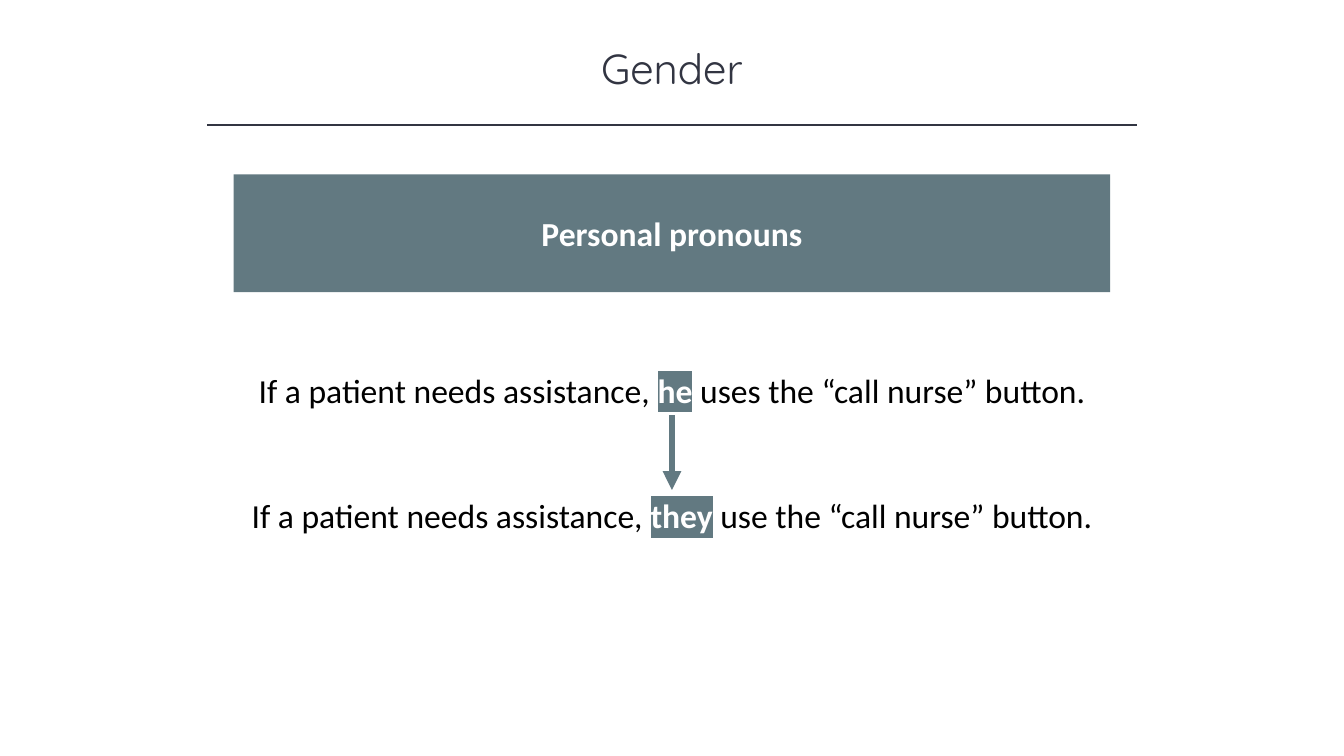
from lxml import etree
from pptx import Presentation
from pptx.dml.color import RGBColor
from pptx.enum import shapes, text
from pptx.oxml.ns import qn
from pptx.util import Pt

HEADING = "Gender"
TOPIC = "Personal pronouns"
OPENING = "If a patient needs assistance, "
EXAMPLES = [
    ("he", " uses the “call nurse” button."),
    ("they", " use the “call nurse” button."),
]
COLORS = {"ink": "323542", "slate": "627981", "black": "000000", "white": "FFFFFF"}

WIDTH, HEIGHT = 960, 540
CENTER = WIDTH / 2
RULE_WIDTH, RULE_Y = 664, 89.3
BAND_WIDTH = 626
BAND_LEFT = (WIDTH - BAND_WIDTH) / 2
FIRST_TOP, STEP, SENTENCE_HEIGHT = 260.6, 89.4, 36


def rgb(name):
    return RGBColor.from_string(COLORS[name])


def add_run(shape, words, size=24, font="Calibri", color="black", bold=False, highlight=None):
    """Append words to the shape's centred first paragraph."""
    paragraph = shape.text_frame.paragraphs[0]
    paragraph.alignment = text.PP_ALIGN.CENTER
    run = paragraph.add_run()
    run.text = words
    run.font.size, run.font.name, run.font.bold = Pt(size), font, bold
    run.font.color.rgb = rgb(color)
    if highlight:
        marker = etree.Element(qn("a:highlight"))
        etree.SubElement(marker, qn("a:srgbClr"), val=COLORS[highlight])
        run.font._element.find(qn("a:solidFill")).addnext(marker)


def add_line(slide, start, end, color, weight, arrow=False):
    line = slide.shapes.add_connector(
        shapes.MSO_CONNECTOR.STRAIGHT, *map(Pt, start + end))
    line.line.color.rgb = rgb(color)
    line.line.width = Pt(weight)
    if arrow:
        etree.SubElement(line.line._get_or_add_ln(), qn("a:tailEnd"), type="triangle")
    etree.SubElement(line._element.spPr, qn("a:effectLst"))


def main():
    deck = Presentation()
    deck.slide_width, deck.slide_height = Pt(WIDTH), Pt(HEIGHT)
    slide = deck.slides.add_slide(deck.slide_layouts[5])

    heading = slide.shapes.title
    heading.left, heading.top, heading.width, heading.height = map(Pt, (120, 26.6, 720, 44))
    heading.text_frame.auto_size = text.MSO_AUTO_SIZE.NONE
    add_run(heading, HEADING, size=30, font="Quicksand", color="ink")

    add_line(slide, (CENTER - RULE_WIDTH / 2, RULE_Y),
             (CENTER + RULE_WIDTH / 2, RULE_Y), "ink", 1)

    topic = slide.shapes.add_shape(
        shapes.MSO_SHAPE.RECTANGLE, *map(Pt, (BAND_LEFT, 124.6, BAND_WIDTH, 84.2)))
    topic.shadow.inherit = False
    topic.fill.solid()
    topic.fill.fore_color.rgb = rgb("slate")
    topic.line.fill.background()
    topic.text_frame.vertical_anchor = text.MSO_ANCHOR.MIDDLE
    add_run(topic, TOPIC, color="white", bold=True)

    for index, (pronoun, ending) in enumerate(EXAMPLES):
        top = FIRST_TOP + index * STEP
        sentence = slide.shapes.add_textbox(
            *map(Pt, (BAND_LEFT, top, BAND_WIDTH, SENTENCE_HEIGHT)))
        sentence.text_frame.word_wrap = True
        add_run(sentence, OPENING)
        add_run(sentence, pronoun, color="white", bold=True, highlight="slate")
        add_run(sentence, ending)

    add_line(slide, (CENTER, FIRST_TOP + SENTENCE_HEIGHT),
             (CENTER, FIRST_TOP + STEP), "slate", 4.5, arrow=True)

    deck.save("out.pptx")


if __name__ == "__main__":
    main()
